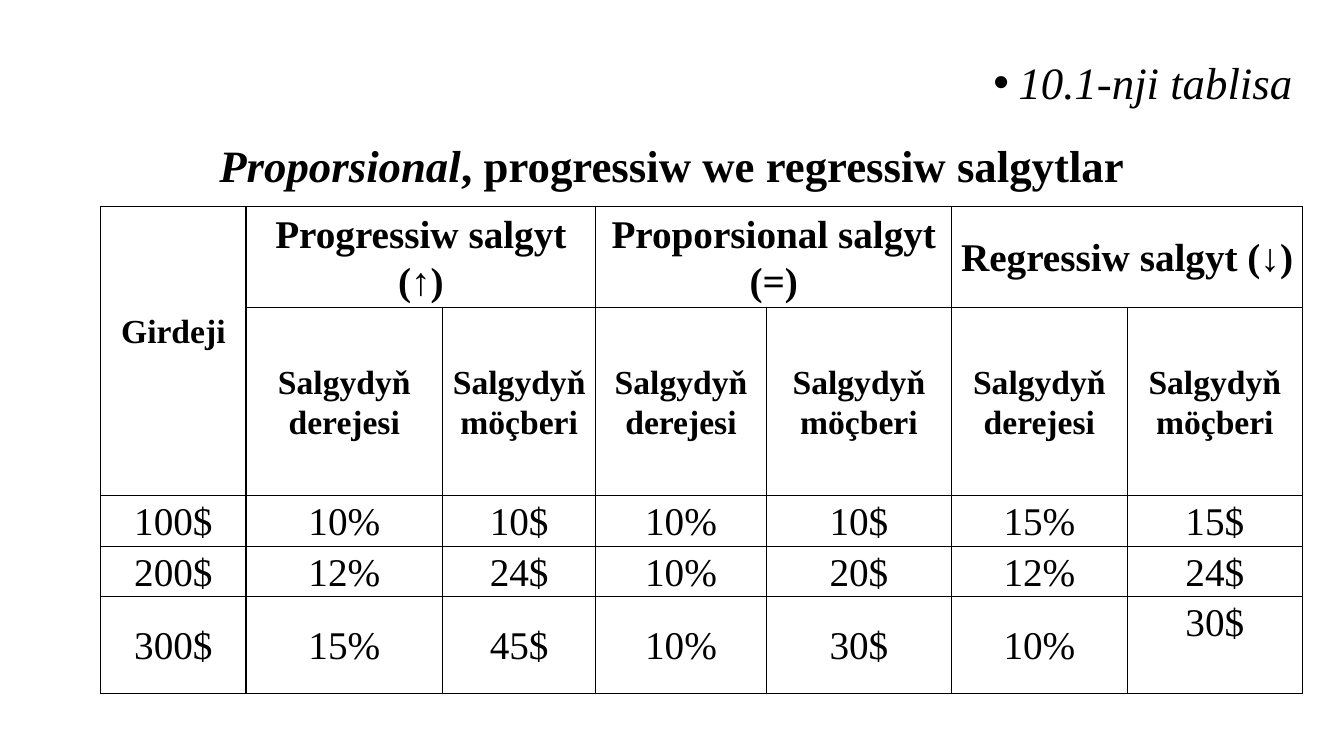
from lxml import etree
from pptx import Presentation, util as u
from pptx.dml.color import RGBColor
from pptx.enum import text
from pptx.oxml.ns import qn

COLORS = {"ink": "000000", "paper": "FFFFFF"}
FONT = "Times New Roman"
COLUMNS = [1.44, 1.95, 1.52, 1.69, 1.84, 1.74, 1.74]
ROWS = [0.92, 1.87, 0.44, 0.44, 0.92]
TAXES = ["Progressiw salgyt (↑)", "Proporsional salgyt (=)", "Regressiw salgyt (↓)"]
MEASURES = ["Salgydyň derejesi", "Salgydyň möçberi"]
INCOMES = [
    ["100$", "10%", "10$", "10%", "10$", "15%", "15$"],
    ["200$", "12%", "24$", "10%", "20$", "12%", "24$"],
    ["300$", "15%", "45$", "10%", "30$", "10%", "30$"],
]


def style(paragraph, size, align=text.PP_ALIGN.CENTER, bold=False):
    paragraph.alignment = align
    paragraph.line_spacing = 1.07
    font = paragraph.font
    font.name, font.size, font.bold = FONT, u.Pt(size), bold
    font.color.rgb = RGBColor.from_string(COLORS["ink"])


def add_bullet(paragraph):
    props = paragraph._p.get_or_add_pPr()
    props.set("marL", str(u.Inches(0.25)))
    props.set("indent", str(u.Inches(-0.25)))
    etree.SubElement(props, qn("a:buFont")).set("typeface", "Arial")
    etree.SubElement(props, qn("a:buChar")).set("char", "•")


def add_heading(slide):
    box = slide.shapes.add_textbox(*map(u.Inches, (0.41, 0.46, 12.51, 1.5)))
    frame = box.text_frame
    frame.word_wrap = True
    number, title = frame.paragraphs[0], frame.add_paragraph()
    add_bullet(number)
    number.text = "10.1-nji tablisa"
    style(number, 32, text.PP_ALIGN.RIGHT)
    number.font.italic = True
    number.space_after = u.Pt(8)
    for words, italic in (("Proporsional", True),
                          (", progressiw we regressiw salgytlar", False)):
        run = title.add_run()
        run.text, run.font.italic = words, italic
    style(title, 32, bold=True)
    title.space_before = u.Pt(10)


def add_borders(cell):
    """Put black 1 pt lines on all four sides, ahead of the cell's fill."""
    props = cell._tc.get_or_add_tcPr()
    for place, side in enumerate(("lnL", "lnR", "lnT", "lnB")):
        line = etree.Element(qn(f"a:{side}"), w=str(u.Pt(1)))
        fill = etree.SubElement(line, qn("a:solidFill"))
        etree.SubElement(fill, qn("a:srgbClr")).set("val", COLORS["ink"])
        props.insert(place, line)


def format_cell(cell):
    cell.vertical_anchor = text.MSO_ANCHOR.MIDDLE
    cell.margin_left = cell.margin_right = u.Inches(0.07)
    cell.margin_top = cell.margin_bottom = 0
    cell.fill.solid()
    cell.fill.fore_color.rgb = RGBColor.from_string(COLORS["paper"])
    add_borders(cell)


def write(cell, words, size, bold=False):
    cell.text = words
    style(cell.text_frame.paragraphs[0], size, bold=bold)


def add_tax_table(slide):
    frame = slide.shapes.add_table(len(ROWS), len(COLUMNS), u.Inches(1), u.Inches(2.05),
                                   u.Inches(sum(COLUMNS)), u.Inches(sum(ROWS)))
    table = frame.table
    for column, width in zip(table.columns, COLUMNS):
        column.width = u.Inches(width)
    for row, height in zip(table.rows, ROWS):
        row.height = u.Inches(height)
    for cell in table.iter_cells():
        format_cell(cell)
        style(cell.text_frame.paragraphs[0], 24)

    income = table.cell(0, 0)
    income.merge(table.cell(1, 0))
    write(income, "Girdeji", 24, bold=True)
    income.margin_bottom = u.Inches(0.41)
    for index, tax in enumerate(TAXES):
        first = 1 + index * len(MEASURES)
        heading = table.cell(0, first)
        heading.merge(table.cell(0, first + len(MEASURES) - 1))
        write(heading, tax, 28, bold=True)
        for offset, measure in enumerate(MEASURES):
            write(table.cell(1, first + offset), measure, 24, bold=True)
    for row, values in enumerate(INCOMES, start=2):
        for column, value in enumerate(values):
            write(table.cell(row, column), value, 28)
    table.cell(len(ROWS) - 1, len(COLUMNS) - 1).margin_bottom = u.Inches(0.46)


def main():
    deck = Presentation()
    deck.slide_width, deck.slide_height = u.Inches(13.33), u.Inches(7.5)
    slide = deck.slides.add_slide(deck.slide_layouts[6])
    add_heading(slide)
    add_tax_table(slide)
    deck.save("out.pptx")


if __name__ == "__main__":
    main()
